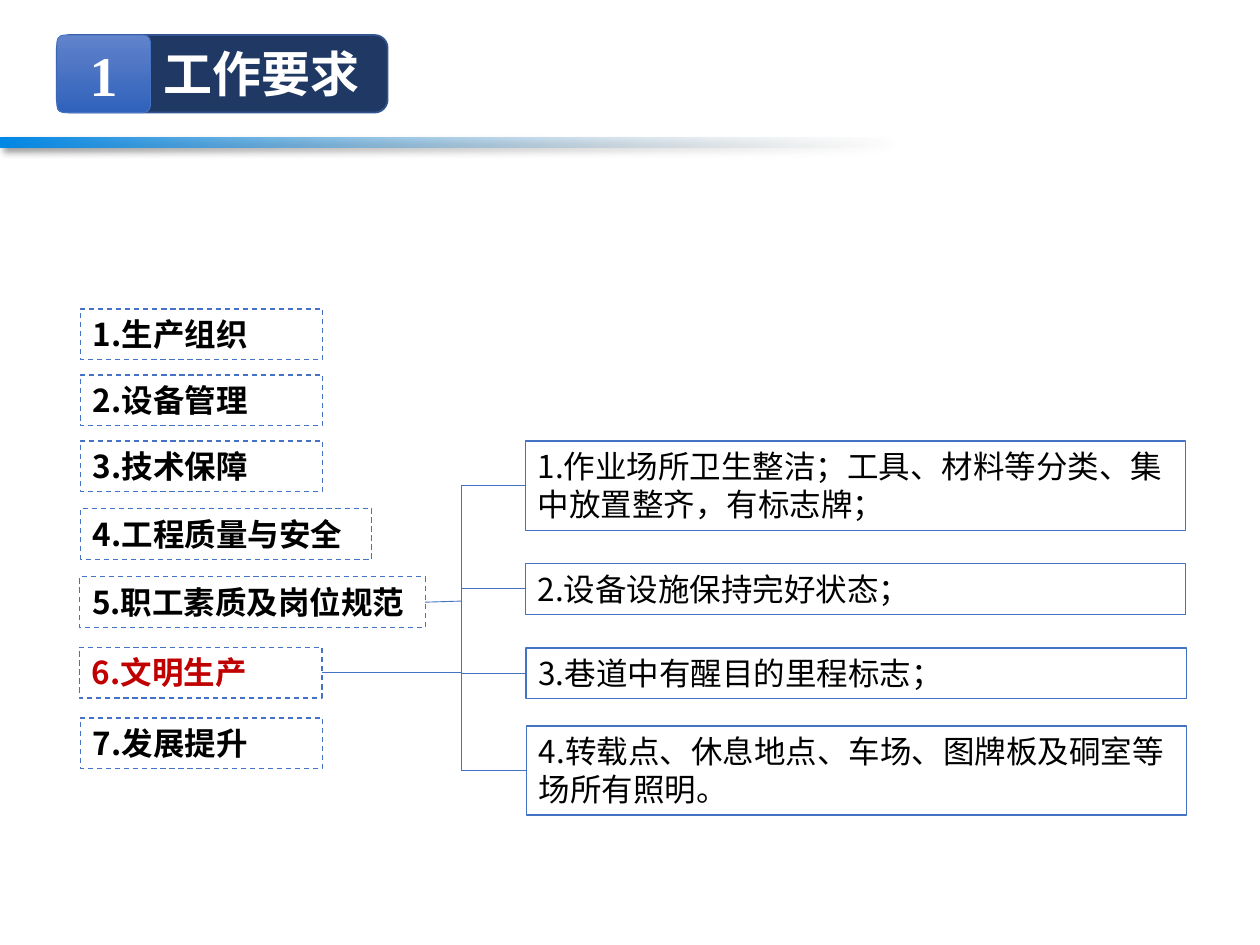
from lxml import etree
from pptx import Presentation
from pptx import util as u
from pptx.dml.color import RGBColor
from pptx.enum import dml, shapes, text
from pptx.oxml import parse_xml
from pptx.oxml.ns import nsdecls, qn

Pt = u.Pt
BLUE = RGBColor(0x44, 0x72, 0xC4)
NAVY = RGBColor(0x20, 0x38, 0x64)
NAVY_EDGE = RGBColor(0x32, 0x54, 0x91)
RED = RGBColor(0xC0, 0x00, 0x00)
BLACK = RGBColor(0x00, 0x00, 0x00)
WHITE = RGBColor(0xFF, 0xFF, 0xFF)
BADGE_TOP = RGBColor(0x61, 0x83, 0xCB)
BADGE_BOTTOM = RGBColor(0x30, 0x62, 0xBB)
CJK = "Noto Sans CJK SC"

prs = Presentation()
prs.slide_width, prs.slide_height = Pt(720), Pt(540)
s = prs.slides.add_slide(prs.slide_layouts[5])


def add_box(x, y, w, h, words, color=BLACK, bold=False):
    sp = s.shapes.add_shape(shapes.MSO_SHAPE.RECTANGLE, Pt(x), Pt(y), Pt(w), Pt(h))
    sp.shadow.inherit = False
    sp.fill.background()
    sp.line.color.rgb = BLUE
    sp.line.width = Pt(0.75)
    tf = sp.text_frame
    tf.word_wrap = True
    tf.auto_size = text.MSO_AUTO_SIZE.SHAPE_TO_FIT_TEXT
    tf.vertical_anchor = text.MSO_ANCHOR.TOP
    p = tf.paragraphs[0]
    p.alignment = text.PP_ALIGN.LEFT
    r = p.add_run()
    r.text = words
    r.font.size = Pt(18)
    r.font.bold = bold
    r.font.color.rgb = color
    r.font.name = CJK
    etree.SubElement(r.font._element, qn("a:ea")).set("typeface", CJK)
    return sp


def add_line(x1, y1, x2, y2):
    cx = s.shapes.add_connector(shapes.MSO_CONNECTOR.STRAIGHT, Pt(x1), Pt(y1), Pt(x2), Pt(y2))
    cx.line.color.rgb = BLUE
    cx.line.width = Pt(0.5)
    etree.SubElement(cx.element.spPr, qn("a:effectLst"))
    return cx


bar = s.shapes.add_shape(shapes.MSO_SHAPE.RECTANGLE, 0, Pt(78.5), Pt(510.5), Pt(6))
bar.line.fill.background()
bar.element.spPr.find(qn("a:prstGeom")).addnext(parse_xml(
    f'<a:gradFill {nsdecls("a")} rotWithShape="1"><a:gsLst>'
    '<a:gs pos="0"><a:srgbClr val="C9C9C9"><a:alpha val="0"/></a:srgbClr></a:gs>'
    '<a:gs pos="100000"><a:srgbClr val="0087E6"/></a:gs></a:gsLst>'
    '<a:path path="circle"><a:fillToRect l="100000" t="100000"/></a:path></a:gradFill>'))
bar.element.spPr.append(parse_xml(
    f'<a:effectLst {nsdecls("a")}><a:outerShdw blurRad="50800" dist="38100" dir="2700000" '
    'algn="tl" rotWithShape="0"><a:srgbClr val="000000"><a:alpha val="40000"/></a:srgbClr>'
    '</a:outerShdw></a:effectLst>'))

banner = s.shapes.add_shape(shapes.MSO_SHAPE.ROUNDED_RECTANGLE, Pt(32.5), Pt(20), Pt(189), Pt(44.3))
banner.shadow.inherit = False
banner.fill.solid()
banner.fill.fore_color.rgb = NAVY
banner.line.color.rgb = NAVY_EDGE
banner.line.width = Pt(1)

badge = s.shapes.add_shape(shapes.MSO_SHAPE.ROUNDED_RECTANGLE, Pt(32.5), Pt(20), Pt(53.5), Pt(44.3))
badge.adjustments[0] = 0.09
badge.shadow.inherit = False
badge.fill.gradient()
badge.fill.gradient_angle = 270
for stop, color, pos in zip(badge.fill.gradient_stops, (BADGE_TOP, BADGE_BOTTOM), (0, 1)):
    stop.color.rgb = color
    stop.position = pos
badge.line.color.rgb = BLUE
badge.line.width = Pt(0.5)
tf = badge.text_frame
tf.vertical_anchor = text.MSO_ANCHOR.MIDDLE
p = tf.paragraphs[0]
p.alignment = text.PP_ALIGN.CENTER
r = p.add_run()
r.text = "1"
r.font.name = "Times New Roman"
r.font.size = Pt(32)
r.font.bold = True
r.font.color.rgb = WHITE

title = s.shapes.title
title.left, title.top, title.width, title.height = Pt(86.5), Pt(21), Pt(138), Pt(41)
badge.element.addnext(title.element)
tf = title.text_frame
tf.word_wrap = True
tf.auto_size = text.MSO_AUTO_SIZE.NONE
tf.vertical_anchor = text.MSO_ANCHOR.TOP
p = tf.paragraphs[0]
p.alignment = text.PP_ALIGN.LEFT
r = p.add_run()
r.text = "工作要求"
r.font.name = "Calibri"
r.font.size = Pt(28)
r.font.bold = True
r.font.color.rgb = WHITE

topics = [
    ("生产组织", 46, 176.5, 138.5),
    ("设备管理", 46, 214.3, 138.5),
    ("技术保障", 46, 252, 138.5),
    ("工程质量与安全", 46, 290.6, 166.5),
    ("职工素质及岗位规范", 45.5, 329.6, 197.5),
    ("文明生产", 45.5, 369.8, 138.5),
    ("发展提升", 46, 410.3, 138.5),
]
boxes = []
for n, (name, x, y, w) in enumerate(topics, 1):
    sp = add_box(x, y, w, 29, f"{n}.{name}", RED if n == 6 else BLACK, True)
    sp.line.dash_style = dml.MSO_LINE.DASH
    boxes.append(sp)

TRUNK = 263.5
add_line(TRUNK, 277.5, TRUNK, 440)
for sp, y in ((boxes[4], 343.5), (boxes[5], 384.3)):
    add_line(243, y, TRUNK, y).begin_connect(sp, 3)

details = [
    ("作业场所卫生整洁；工具、材料等分类、集中放置整齐，有标志牌；", 300.2, 252, 51),
    ("设备设施保持完好状态；", 300.2, 322, 29),
    ("巷道中有醒目的里程标志；", 300.6, 370.3, 29),
    ("转载点、休息地点、车场、图牌板及硐室等场所有照明。", 300.8, 414.8, 51),
]
for n, (words, x, y, h) in enumerate(details, 1):
    sp = add_box(x, y, 377.3, h, f"{n}.{words}")
    add_line(TRUNK, y + h / 2, x, y + h / 2).end_connect(sp, 1)

prs.save("out.pptx")
